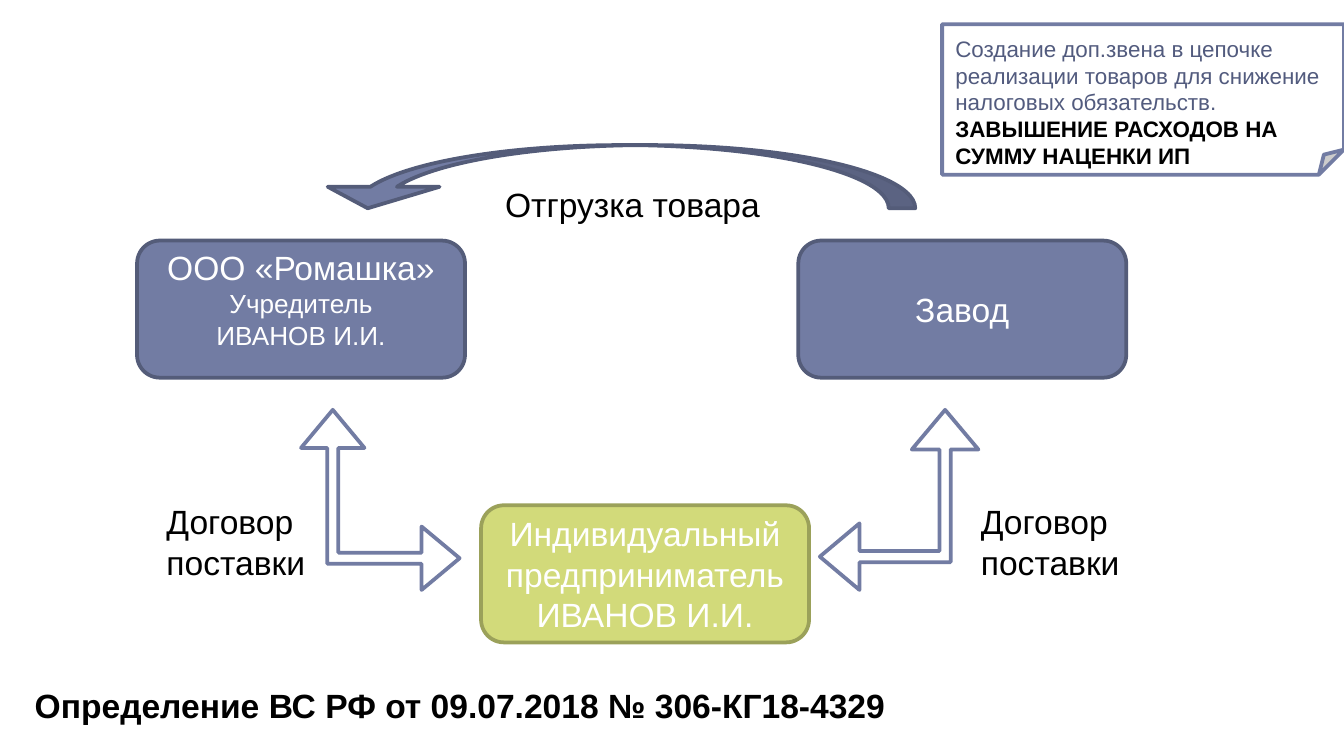
from dataclasses import dataclass

import pptx
import pptx.dml.color
import pptx.enum.shapes
import pptx.enum.text
import pptx.util

KIND = pptx.enum.shapes.MSO_SHAPE
ALIGN = pptx.enum.text.PP_ALIGN
ANCHOR = pptx.enum.text.MSO_ANCHOR

# Grid of 100 columns; rows are as tall as columns are wide.
COLS, ROWS = 100, 56.25
CELL = pptx.util.Inches(10) / COLS

WHITE, BLACK = "FFFFFF", "000000"
BLUE, NAVY, SLATE = "727CA3", "545C79", "525B7E"
LIME, OLIVE = "D2DA7A", "9BA15A"

BOX_W, BOX_H = 24.4, 10.2
TURN_W, TURN_H = 11.8, 13.4
TOP_ROW, TURN_ROW, DEAL_ROW = 17.9, 30.5, 36.8
NOTE_COL, NOTE_W = 70.1, 29.9


@dataclass
class Area:
    col: float
    row: float
    wide: float
    high: float

    def place(self) -> list:
        return [round(n * CELL) for n in (self.col, self.row, self.wide, self.high)]


@dataclass
class Figure:
    kind: int
    area: Area
    fill: str
    edge: str
    adjust: tuple = ()
    flip: bool = False


@dataclass
class Label:
    area: Area
    lines: tuple


@dataclass
class Line:
    text: str
    size: int = 18
    color: str = BLACK
    bold: bool = False


def paint(target, color: str) -> None:
    target.rgb = pptx.dml.color.RGBColor.from_string(color)


def draw(slide, figure: Figure):
    shape = slide.shapes.add_shape(figure.kind, *figure.area.place())
    shape.shadow.inherit = False
    shape.fill.solid()
    paint(shape.fill.fore_color, figure.fill)
    paint(shape.line.color, figure.edge)
    shape.line.width = pptx.util.Pt(2)
    for i, value in enumerate(figure.adjust):
        shape.adjustments[i] = value
    if figure.flip:
        shape.element.spPr.xfrm.set("flipH", "1")
    return shape


def write(shape, lines: tuple, *, align=ALIGN.LEFT, anchor=ANCHOR.TOP, top=0.05) -> None:
    frame = shape.text_frame
    frame.word_wrap = True
    frame.vertical_anchor = anchor
    frame.margin_top = pptx.util.Inches(top)
    for i, line in enumerate(lines):
        para = frame.add_paragraph() if i else frame.paragraphs[0]
        para.alignment = align
        run = para.add_run()
        run.text = line.text
        run.font.name = "Arial"
        run.font.size = pptx.util.Pt(line.size)
        run.font.bold = line.bold
        paint(run.font.color, line.color)


def draw_box(slide, col: float, row: float, fill: str, edge: str, lines: tuple, **style) -> None:
    area = Area(col, row, BOX_W, BOX_H)
    shape = draw(slide, Figure(KIND.ROUNDED_RECTANGLE, area, fill, edge))
    write(shape, lines, align=ALIGN.CENTER, **style)


def draw_label(slide, label: Label) -> None:
    box = slide.shapes.add_textbox(*label.area.place())
    write(box, label.lines)


def main() -> None:
    deck = pptx.Presentation()
    deck.slide_width = round(COLS * CELL)
    deck.slide_height = round(ROWS * CELL)
    slide = deck.slides.add_slide(deck.slide_layouts[6])

    draw(slide, Figure(KIND.FOLDED_CORNER, Area(NOTE_COL, 1.8, NOTE_W, 11.2), WHITE, BLUE))

    buyer = (
        Line("ООО «Ромашка»", color=WHITE),
        Line("Учредитель", 14, WHITE),
        Line("ИВАНОВ И.И.", 14, WHITE),
    )
    agent = (
        Line("Индивидуальный предприниматель", color=WHITE),
        Line("ИВАНОВ И.И.", color=WHITE),
    )
    plant = (Line("Завод", color=WHITE),)
    draw_box(slide, 10.2, TOP_ROW, BLUE, NAVY, buyer, top=0)
    draw_box(slide, 59.4, TOP_ROW, BLUE, NAVY, plant, anchor=ANCHOR.MIDDLE)
    draw_box(slide, 35.8, 37.6, LIME, OLIVE, agent, anchor=ANCHOR.MIDDLE)

    arrows = (
        Figure(KIND.LEFT_UP_ARROW, Area(61, TURN_ROW, TURN_W, TURN_H),
               WHITE, BLUE, (0.07, 0.21, 0.25)),
        Figure(KIND.LEFT_UP_ARROW, Area(22.4, TURN_ROW, TURN_W, TURN_H),
               WHITE, BLUE, (0.07, 0.2, 0.24), flip=True),
        Figure(KIND.CURVED_DOWN_ARROW, Area(23.2, 10.8, 44.9, 4.7),
               BLUE, NAVY, (0.42, 1.77, 0.34), flip=True),
    )
    for arrow in arrows:
        draw(slide, arrow)

    deal = (Line("Договор поставки"),)
    note = (
        Line("Создание доп.звена в цепочке реализации товаров для снижение "
             "налоговых обязательств.", 12, SLATE),
        Line("ЗАВЫШЕНИЕ РАСХОДОВ НА СУММУ НАЦЕНКИ ИП", 12, bold=True),
    )
    ruling = (Line("Определение ВС РФ от 09.07.2018 № 306-КГ18-4329", bold=True),)
    labels = (
        Label(Area(1.6, 50.5, 66.9, 4), ruling),
        Label(Area(36.6, 13.2, 21.3, 4), (Line("Отгрузка товара"),)),
        Label(Area(11.4, DEAL_ROW, 16.5, 7.1), deal),
        Label(Area(72, DEAL_ROW, 16.5, 7.1), deal),
        Label(Area(NOTE_COL, 2.1, NOTE_W, 11.1), note),
    )
    for label in labels:
        draw_label(slide, label)

    deck.save("out.pptx")


if __name__ == "__main__":
    main()
